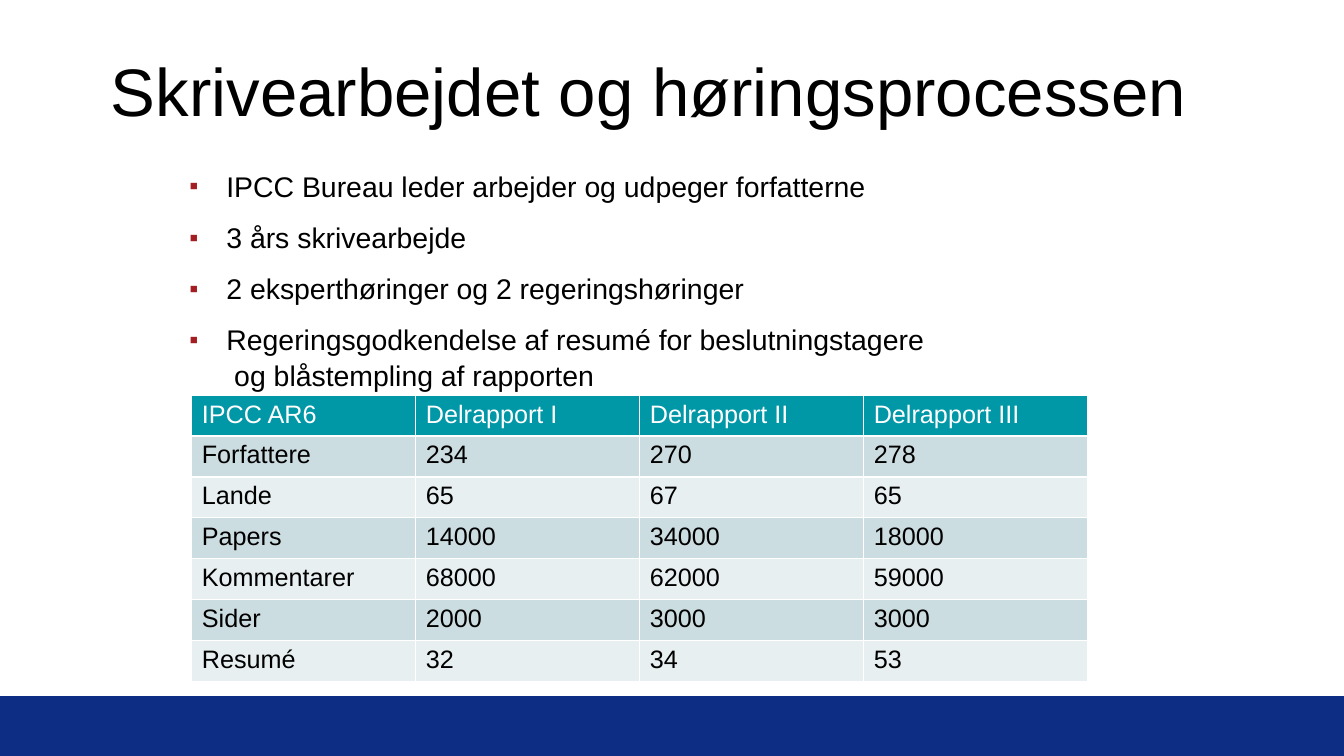
"""Build a slide on the writing and review process of the IPCC reports."""
from lxml import etree
from pptx import Presentation
from pptx.dml.color import RGBColor
from pptx.enum.shapes import MSO_SHAPE
from pptx.enum.text import MSO_ANCHOR, MSO_AUTO_SIZE, PP_ALIGN
from pptx.oxml.ns import qn
from pptx.util import Pt

RECTANGLE = MSO_SHAPE.RECTANGLE
TOP, MIDDLE = MSO_ANCHOR.TOP, MSO_ANCHOR.MIDDLE
NO_AUTOFIT = MSO_AUTO_SIZE.NONE
LEFT = PP_ALIGN.LEFT

BLACK = RGBColor(0x00, 0x00, 0x00)
WHITE = RGBColor(0xFF, 0xFF, 0xFF)
NAVY = RGBColor(0x0C, 0x2D, 0x83)
RED = RGBColor(0xA3, 0x1E, 0x22)
TEAL = RGBColor(0x00, 0x97, 0xA7)
BAND_DARK = RGBColor(0xCC, 0xDD, 0xE1)
BAND_LIGHT = RGBColor(0xE7, 0xEF, 0xF1)

FONT = "Arial"
TITLE = "Skrivearbejdet og høringsprocessen"
BULLETS = [
    "IPCC Bureau leder arbejder og udpeger forfatterne",
    "3 års skrivearbejde",
    "2 eksperthøringer og 2 regeringshøringer",
    "Regeringsgodkendelse af resumé for beslutningstagere\v og blåstempling af rapporten",
]
ROWS = [
    ["IPCC AR6", "Delrapport I", "Delrapport II", "Delrapport III"],
    ["Forfattere", "234", "270", "278"],
    ["Lande", "65", "67", "65"],
    ["Papers", "14000", "34000", "18000"],
    ["Kommentarer", "68000", "62000", "59000"],
    ["Sider", "2000", "3000", "3000"],
    ["Resumé", "32", "34", "53"],
]


def write(p, text, size=18, color=BLACK, before=0, after=0, spacing=1.0):
    """Fill a paragraph with text in the given format."""
    p.text = text
    p.alignment = LEFT
    p.space_before, p.space_after = Pt(before), Pt(after)
    p.line_spacing = spacing
    for r in p.runs:
        r.font.name = FONT
        r.font.size = Pt(size)
        r.font.color.rgb = color


def place(sp, left, top, width, height, anchor):
    """Move a placeholder and set up its text frame."""
    sp.left, sp.top, sp.width, sp.height = Pt(left), Pt(top), Pt(width), Pt(height)
    tf = sp.text_frame
    tf.word_wrap = True
    tf.auto_size = NO_AUTOFIT
    tf.vertical_anchor = anchor
    return tf


def add_bullet(p):
    """Give a paragraph a hanging red square bullet."""
    pPr = p._p.get_or_add_pPr()
    pPr.set("marL", str(Pt(27)))
    pPr.set("indent", str(-Pt(26.5)))
    color = etree.SubElement(pPr, qn("a:buClr"))
    etree.SubElement(color, qn("a:srgbClr"), val=str(RED))
    etree.SubElement(pPr, qn("a:buSzPct"), val="90000")
    etree.SubElement(pPr, qn("a:buFont"), typeface=FONT)
    etree.SubElement(pPr, qn("a:buChar"), char="▪")


def add_bullets(sp, items):
    """Write the bulleted list into the body placeholder."""
    tf = place(sp, 127.5, 116, 645, 166, TOP)
    for i, item in enumerate(items):
        p = tf.add_paragraph() if i else tf.paragraphs[0]
        add_bullet(p)
        write(p, item, size=20.3, before=5 if i else 0, after=6, spacing=1.05)


def format_cell(cell, fill):
    """Fill a cell and draw thin white borders around it."""
    tcPr = cell._tc.get_or_add_tcPr()
    for side in ("a:lnL", "a:lnR", "a:lnT", "a:lnB"):
        line = etree.SubElement(tcPr, qn(side), w=str(Pt(1)))
        solid = etree.SubElement(line, qn("a:solidFill"))
        etree.SubElement(solid, qn("a:srgbClr"), val=str(WHITE))
    cell.fill.solid()
    cell.fill.fore_color.rgb = fill


def add_report_table(s, rows):
    """Add the banded table of report figures."""
    col_width, row_height = 160, 29.25
    table = s.shapes.add_table(
        len(rows), len(rows[0]), Pt(137), Pt(282.25),
        Pt(col_width * len(rows[0])), Pt(row_height * len(rows))).table
    for column in table.columns:
        column.width = Pt(col_width)
    for i, values in enumerate(rows):
        table.rows[i].height = Pt(row_height)
        fill = TEAL if i == 0 else BAND_DARK if i % 2 else BAND_LIGHT
        for j, value in enumerate(values):
            cell = table.cell(i, j)
            format_cell(cell, fill)
            write(cell.text_frame.paragraphs[0], value, color=BLACK if i else WHITE)


def add_footer_bar(s, width):
    """Add the navy bar along the bottom edge."""
    bar = s.shapes.add_shape(RECTANGLE, 0, Pt(497.25), width, Pt(42.75))
    bar.shadow.inherit = False
    bar.fill.solid()
    bar.fill.fore_color.rgb = NAVY
    bar.line.fill.background()


def main():
    """Build and save the slide."""
    prs = Presentation()
    prs.slide_width, prs.slide_height = Pt(960), Pt(540)
    s = prs.slides.add_slide(prs.slide_layouts[1])
    add_footer_bar(s, prs.slide_width)
    tf = place(s.shapes.title, 72, 11.5, 828, 104.5, MIDDLE)
    write(tf.paragraphs[0], TITLE, size=48)
    add_bullets(s.placeholders[1], BULLETS)
    add_report_table(s, ROWS)
    prs.save("out.pptx")


if __name__ == "__main__":
    main()
